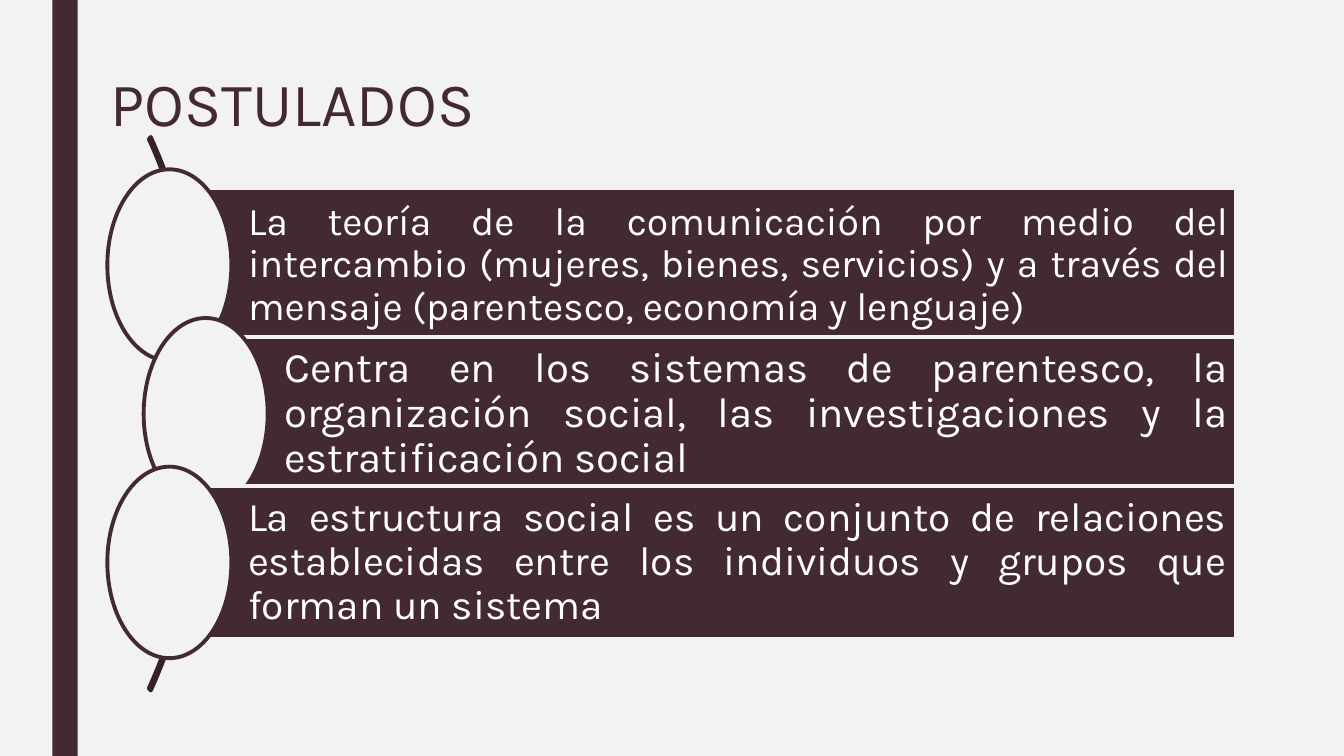
from dataclasses import dataclass

from pptx import Presentation
from pptx.dml.color import RGBColor
from pptx.enum.shapes import MSO_SHAPE
from pptx.enum.text import MSO_ANCHOR, PP_ALIGN
from pptx.util import Inches, Pt


@dataclass(frozen=True)
class Theme:
    font: str = "Karla"
    paper: str = "F2F2F0"
    plum: str = "432A30"
    dark_plum: str = "362226"
    white: str = "FFFFFF"
    title_size: int = 44
    postulate_sizes: tuple = (28, 30, 29)
    line_width: float = 2.75


def write_text(frame, text, *, size, color, font, spacing=0.9,
               align=PP_ALIGN.LEFT, anchor=MSO_ANCHOR.TOP,
               insets=(0.1, 0.05, 0.1, 0.05)):
    frame.word_wrap = True
    frame.vertical_anchor = anchor
    (frame.margin_left, frame.margin_top,
     frame.margin_right, frame.margin_bottom) = map(Inches, insets)
    paragraph = frame.paragraphs[0]
    paragraph.alignment = align
    paragraph.line_spacing = spacing
    run = paragraph.add_run()
    run.text = text
    run.font.name = font
    run.font.size = Pt(size)
    run.font.color.rgb = RGBColor.from_string(color)


class SlideBuilder:
    def __init__(self, slide, theme):
        self.slide = slide
        self.theme = theme

    def background(self):
        fill = self.slide.background.fill
        fill.solid()
        fill.fore_color.rgb = RGBColor.from_string(self.theme.paper)

    def shape(self, kind, box, fill=None, line=None):
        shape = self.slide.shapes.add_shape(kind, *map(Inches, box))
        shape.shadow.inherit = False
        if fill:
            shape.fill.solid()
            shape.fill.fore_color.rgb = RGBColor.from_string(fill)
        else:
            shape.fill.background()
        if line:
            shape.line.color.rgb = RGBColor.from_string(line)
            shape.line.width = Pt(self.theme.line_width)
        else:
            shape.line.fill.background()
        return shape

    def title(self, text, box):
        heading = self.slide.shapes.add_textbox(*map(Inches, box))
        write_text(heading.text_frame, text, size=self.theme.title_size,
                   color=self.theme.plum, font=self.theme.font, spacing=0.89)

    def arc(self, box):
        arc = self.shape(MSO_SHAPE.BLOCK_ARC, box, line=self.theme.dark_plum)
        for index, value in enumerate((189, 27, 0.004)):
            arc.adjustments[index] = value

    def postulate(self, text, left, top, size):
        right, bar_height = 12.26, 1.52
        circle_width, circle_height = 1.23, 1.9
        bar = self.shape(MSO_SHAPE.RECTANGLE,
                         (left, top, right - left, bar_height),
                         self.theme.plum, self.theme.paper)
        write_text(bar.text_frame, text, size=size, color=self.theme.white,
                   font=self.theme.font, align=PP_ALIGN.JUSTIFY,
                   anchor=MSO_ANCHOR.MIDDLE, insets=(0.78, 0.08, 0.08, 0.08))
        self.shape(MSO_SHAPE.OVAL,
                   (left - circle_width / 2, top + (bar_height - circle_height) / 2,
                    circle_width, circle_height),
                   self.theme.paper, self.theme.plum)


POSTULATES = (
    "La teoría de la comunicación por medio del intercambio (mujeres, bienes, "
    "servicios) y a través del mensaje (parentesco, economía y lenguaje)",
    "Centra en los sistemas de parentesco, la organización social, las "
    "investigaciones y la estratificación social",
    "La estructura social es un conjunto de relaciones establecidas entre los "
    "individuos y grupos que forman un sistema",
)


def main():
    theme = Theme()
    presentation = Presentation()
    presentation.slide_width = Inches(13.33)
    presentation.slide_height = Inches(7.5)
    slide = presentation.slides.add_slide(presentation.slide_layouts[6])
    builder = SlideBuilder(slide, theme)

    builder.background()
    builder.shape(MSO_SHAPE.RECTANGLE, (0.52, 0, 0.25, 7.5), theme.plum)
    builder.title("POSTULADOS", (1, 0.68, 11.33, 0.97))
    builder.arc((-4.56, -0.81, 6.62, 9.83))

    first_top, row_step = 1.87, 1.475
    outer_left, indent = 1.68, 0.36
    for row, (text, size) in enumerate(zip(POSTULATES, theme.postulate_sizes)):
        builder.postulate(text, outer_left + indent * (row % 2),
                          first_top + row * row_step, size)

    presentation.save("out.pptx")


if __name__ == "__main__":
    main()
